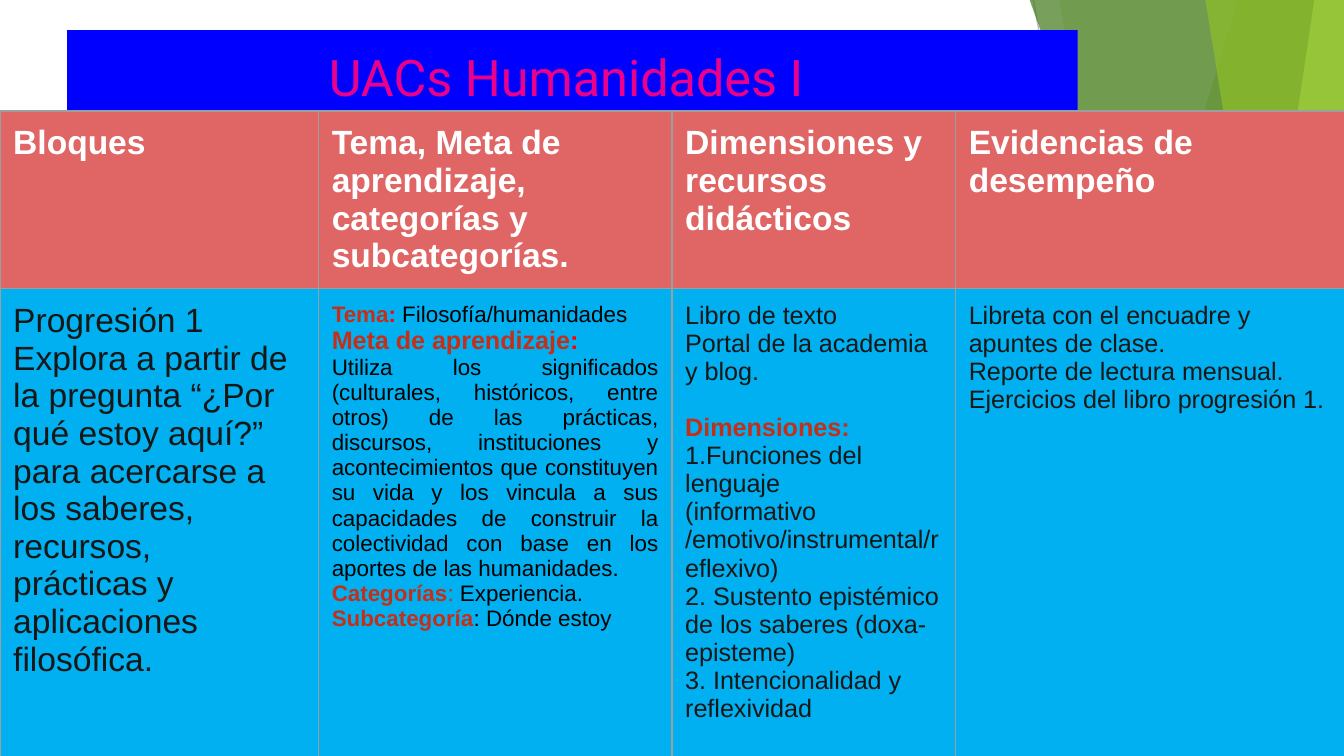
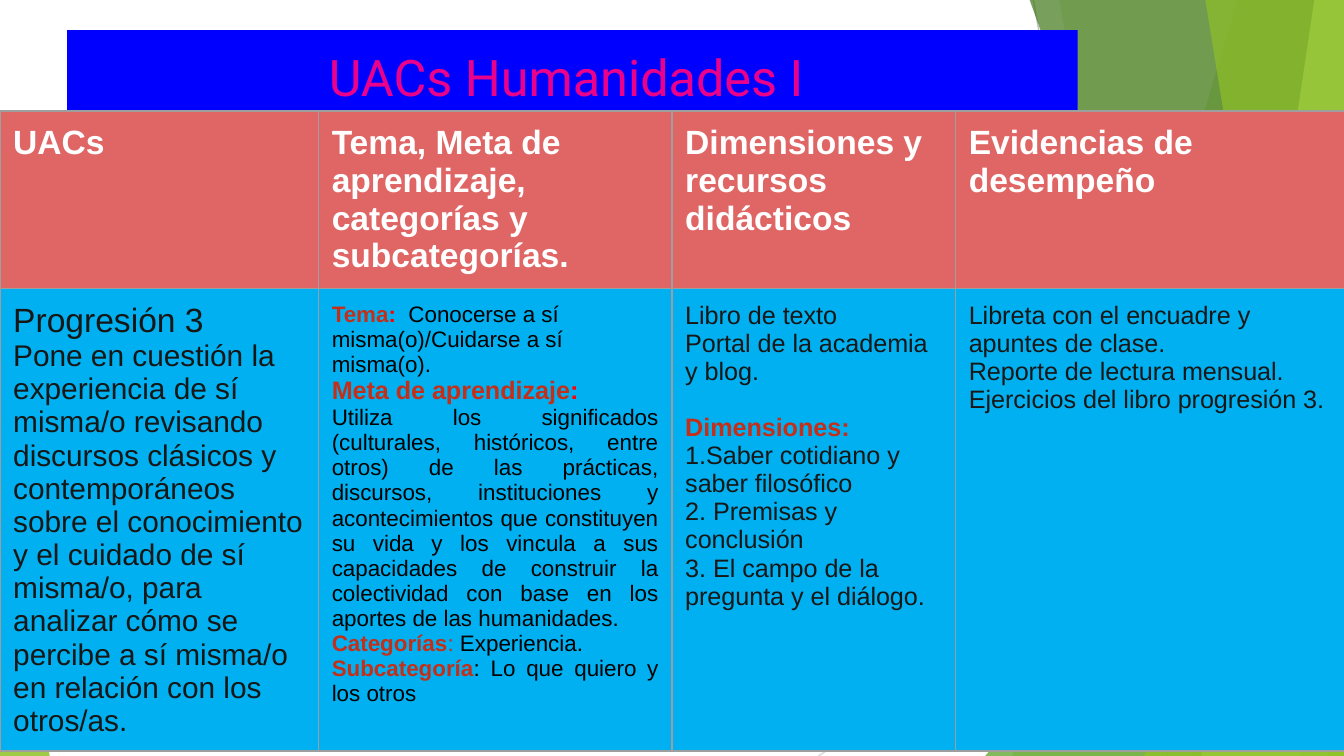
from dataclasses import dataclass

from lxml import etree
from pptx import Presentation
from pptx.dml.color import RGBColor
from pptx.enum import shapes, text
from pptx.oxml import ns
from pptx.util import Cm, Pt


@dataclass(frozen=True)
class Theme:
    heading_font: str = "Roboto"
    body_font: str = "Arial"
    title_size: float = 27
    large: float = 18
    reading: float = 16
    medium: float = 13.5
    small: float = 12
    border_width: float = 0.75
    blue: str = "0000FF"
    magenta: str = "EB008B"
    coral: str = "E06666"
    sky: str = "00B0F0"
    white: str = "FFFFFF"
    ink: str = "171717"
    black: str = "000000"
    accent: str = "C42F1A"
    red: str = "FF0000"
    border: str = "9E9E9E"
    ray_dark: str = "BFBFBF"
    ray_light: str = "D8D8D8"
    lime: str = "90C226"
    leaf: str = "54A021"
    forest: str = "3F7818"
    pale_lime: str = "BFE471"


@dataclass(frozen=True)
class Box:
    left: float
    top: float
    width: float
    height: float

    def lengths(self):
        return Cm(self.left), Cm(self.top), Cm(self.width), Cm(self.height)


@dataclass(frozen=True)
class Run:
    words: str
    size: float
    color: str
    bold: bool = False


@dataclass(frozen=True)
class Line:
    runs: tuple
    align: object = text.PP_ALIGN.LEFT
    space_before: float = 0


@dataclass(frozen=True)
class Progression:
    first_heading: str
    block: tuple
    topic: str
    subcategory: str
    dimensions: tuple
    number: int
    body_height: float


THEME = Theme()
PAGE = Box(0, 0, 25.4, 14.29)
TITLE_BOX = Box(1.27, 0.57, 19.1, 1.88)
TABLE_LEFT, TABLE_TOP = 0, 2.1
HEADER_HEIGHT = 3.36
COLUMN_WIDTHS = (6.02, 6.68, 5.36, 7.47)
INSET = 0.25
TITLE = "UACs Humanidades I "
HEADINGS = (
    "Tema, Meta de aprendizaje, categorías y subcategorías.",
    "Dimensiones y recursos didácticos",
    "Evidencias de desempeño",
)
GOAL = (
    "Utiliza los significados (culturales, históricos, entre otros) de las prácticas, "
    "discursos, instituciones y acontecimientos que constituyen su vida y los vincula a "
    "sus capacidades de construir la colectividad con base en los aportes de las humanidades."
)

PROGRESSIONS = (
    Progression(
        "Bloques",
        (
            ("Progresión 1 Explora a partir de la pregunta “¿Por qué estoy aquí?” "
             "para acercarse a los saberes, recursos,", THEME.large),
            ("prácticas y aplicaciones filosófica.", THEME.large),
        ),
        " Filosofía/humanidades",
        ": Dónde estoy",
        (
            "1.Funciones del lenguaje (informativo /emotivo/instrumental/reflexivo)",
            "2. Sustento epistémico de los saberes (doxa-episteme)",
            "3. Intencionalidad y reflexividad",
        ),
        1,
        9.2,
    ),
    Progression(
        "UACs",
        (
            ("Progresión 3", THEME.large),
            ("Pone en cuestión la experiencia de sí misma/o revisando discursos clásicos y "
             "contemporáneos sobre el conocimiento y el cuidado de sí misma/o, para analizar "
             "cómo se percibe a sí misma/o en relación con los otros/as.", THEME.reading),
        ),
        "  Conocerse a sí misma(o)/Cuidarse a sí misma(o).",
        ": Lo que quiero y los otros",
        (
            "1.Saber cotidiano y saber filosófico",
            "2. Premisas y conclusión",
            "3. El campo de la pregunta y el diálogo.",
        ),
        3,
        8.73,
    ),
)


def rgb(color):
    return RGBColor.from_string(color)


def paint(shape, color, opacity=100):
    shape.shadow.inherit = False
    shape.line.fill.background()
    shape.fill.solid()
    shape.fill.fore_color.rgb = rgb(color)
    if opacity < 100:
        tone = shape._element.spPr.find(".//" + ns.qn("a:srgbClr"))
        etree.SubElement(tone, ns.qn("a:alpha"), val=str(opacity * 1000))


def write_lines(frame, lines, font):
    frame.word_wrap = True
    for index, line in enumerate(lines):
        paragraph = frame.paragraphs[0] if index == 0 else frame.add_paragraph()
        paragraph.alignment = line.align
        if line.space_before:
            paragraph.space_before = Pt(line.space_before)
        for piece in line.runs:
            run = paragraph.add_run()
            run.text = piece.words
            run.font.name = font
            run.font.size = Pt(piece.size)
            run.font.bold = piece.bold
            run.font.color.rgb = rgb(piece.color)


def add_ray(slide, start, end, color):
    ray = slide.shapes.add_connector(
        shapes.MSO_CONNECTOR.STRAIGHT, *(Cm(value) for value in start + end))
    ray.line.color.rgb = rgb(color)
    ray.line.width = Pt(THEME.border_width)
    etree.SubElement(ray._element.spPr, ns.qn("a:effectLst"))


def add_wedge(slide, box, top_x, bottom_x, color, opacity):
    right, bottom = box.left + box.width, box.top + box.height
    builder = slide.shapes.build_freeform(Cm(box.left + top_x), Cm(box.top))
    corners = ((right, box.top), (right, bottom), (box.left + bottom_x, bottom))
    builder.add_line_segments([(Cm(x), Cm(y)) for x, y in corners], close=True)
    paint(builder.convert_to_shape(), color, opacity)


def add_corner(slide, box, width, height, on_right, color, opacity):
    left = box.left + (box.width - width if on_right else 0)
    area = Box(left, box.top + box.height - height, width, height)
    corner = slide.shapes.add_shape(
        shapes.MSO_SHAPE.ISOSCELES_TRIANGLE, *area.lengths())
    corner.adjustments[0] = 1 if on_right else 0
    paint(corner, color, opacity)


def draw_facets(slide, box):
    right, bottom = box.left + box.width, box.top + box.height
    add_ray(slide, (box.left + 19.53, box.top), (box.left + 22.07, bottom), THEME.ray_dark)
    add_ray(slide, (right, box.top + 7.67), (box.left + 15.47, bottom), THEME.ray_light)
    add_wedge(slide, box, 23.39, 19.13, THEME.lime, 30)
    add_wedge(slide, box, 20.02, 22.53, THEME.lime, 20)
    add_corner(slide, box, 6.78, 7.92, True, THEME.leaf, 72)
    add_wedge(slide, box, 19.46, 24.59, THEME.forest, 70)
    add_wedge(slide, box, 24.84, 22.71, THEME.pale_lime, 70)
    add_wedge(slide, box, 22.78, 25.1, THEME.lime, 65)
    add_corner(slide, box, 3.78, 6.81, True, THEME.lime, 80)
    add_corner(slide, box, 0.94, 5.92, False, THEME.lime, 85)


def draw_title(slide, box):
    banner = slide.shapes.add_shape(shapes.MSO_SHAPE.RECTANGLE, *box.lengths())
    paint(banner, THEME.blue)
    frame = banner.text_frame
    frame.margin_left = frame.margin_right = Cm(INSET)
    frame.margin_top = frame.margin_bottom = Cm(INSET)
    frame.vertical_anchor = text.MSO_ANCHOR.MIDDLE
    heading = Run(TITLE, THEME.title_size, THEME.magenta)
    write_lines(frame, [Line((heading,), text.PP_ALIGN.CENTER)], THEME.heading_font)
    frame.paragraphs[0].line_spacing = 0.9


def plain_lines(sentences, size, color):
    return [Line((Run(sentence, size, color),)) for sentence in sentences]


def topic_lines(progression):
    small, justify = THEME.small, text.PP_ALIGN.JUSTIFY

    def label(words, size=small):
        return Run(words, size, THEME.accent, True)

    def colon(size=small):
        return Run(":", size, THEME.red, True)

    def detail(words):
        return Run(words, small, THEME.black)

    return [
        Line((label("Tema"), colon(), detail(progression.topic))),
        Line((label("Meta de aprendizaje", THEME.medium), colon(THEME.medium))),
        Line((detail(GOAL),), justify),
        Line((label("Categorías"), Run(":", small, THEME.accent), detail(" Experiencia.")), justify),
        Line((label("Subcategoría"), detail(progression.subcategory)), justify),
    ]


def resource_lines(progression):
    resources = ("Libro de texto", "Portal de la academia y blog.")
    heading = Run("Dimensiones:", THEME.medium, THEME.accent, True)
    return [
        *plain_lines(resources, THEME.medium, THEME.ink),
        Line((heading,), space_before=15),
        *plain_lines(progression.dimensions, THEME.medium, THEME.ink),
    ]


def evidence_lines(progression):
    return plain_lines((
        "Libreta con el encuadre y apuntes de clase.",
        "Reporte de lectura mensual.",
        f"Ejercicios del libro progresión {progression.number}.",
    ), THEME.medium, THEME.ink)


def fill_cell(cell, lines, color):
    cell.margin_left = cell.margin_right = Cm(INSET)
    cell.margin_top = cell.margin_bottom = Cm(INSET)
    properties = cell._tc.get_or_add_tcPr()
    for side in ("lnL", "lnR", "lnT", "lnB"):
        edge = etree.SubElement(
            properties, ns.qn("a:" + side), w=str(Pt(THEME.border_width)))
        solid = etree.SubElement(edge, ns.qn("a:solidFill"))
        etree.SubElement(solid, ns.qn("a:srgbClr"), val=THEME.border)
    cell.fill.solid()
    cell.fill.fore_color.rgb = rgb(color)
    write_lines(cell.text_frame, lines, THEME.body_font)


def draw_table(slide, box, progression):
    headings = [
        [Line((Run(heading, THEME.large, THEME.white, True),))]
        for heading in (progression.first_heading, *HEADINGS)
    ]
    block = [Line((Run(words, size, THEME.ink),)) for words, size in progression.block]
    contents = [block, topic_lines(progression), resource_lines(progression),
                evidence_lines(progression)]
    table = slide.shapes.add_table(2, len(COLUMN_WIDTHS), *box.lengths()).table
    table.first_row = table.horz_banding = False
    for column, width in zip(table.columns, COLUMN_WIDTHS):
        column.width = Cm(width)
    rows = ((HEADER_HEIGHT, headings, THEME.coral),
            (box.height - HEADER_HEIGHT, contents, THEME.sky))
    for row, (height, cells, color) in zip(table.rows, rows):
        row.height = Cm(height)
        for cell, lines in zip(row.cells, cells):
            fill_cell(cell, lines, color)


def build_slide(presentation, progression):
    slide = presentation.slides.add_slide(presentation.slide_layouts[6])
    draw_facets(slide, PAGE)
    draw_title(slide, TITLE_BOX)
    table_box = Box(TABLE_LEFT, TABLE_TOP, sum(COLUMN_WIDTHS),
                    HEADER_HEIGHT + progression.body_height)
    draw_table(slide, table_box, progression)


def main():
    presentation = Presentation()
    presentation.slide_width = Cm(PAGE.width)
    presentation.slide_height = Cm(PAGE.height)
    for progression in PROGRESSIONS:
        build_slide(presentation, progression)
    presentation.save("out.pptx")


if __name__ == "__main__":
    main()
